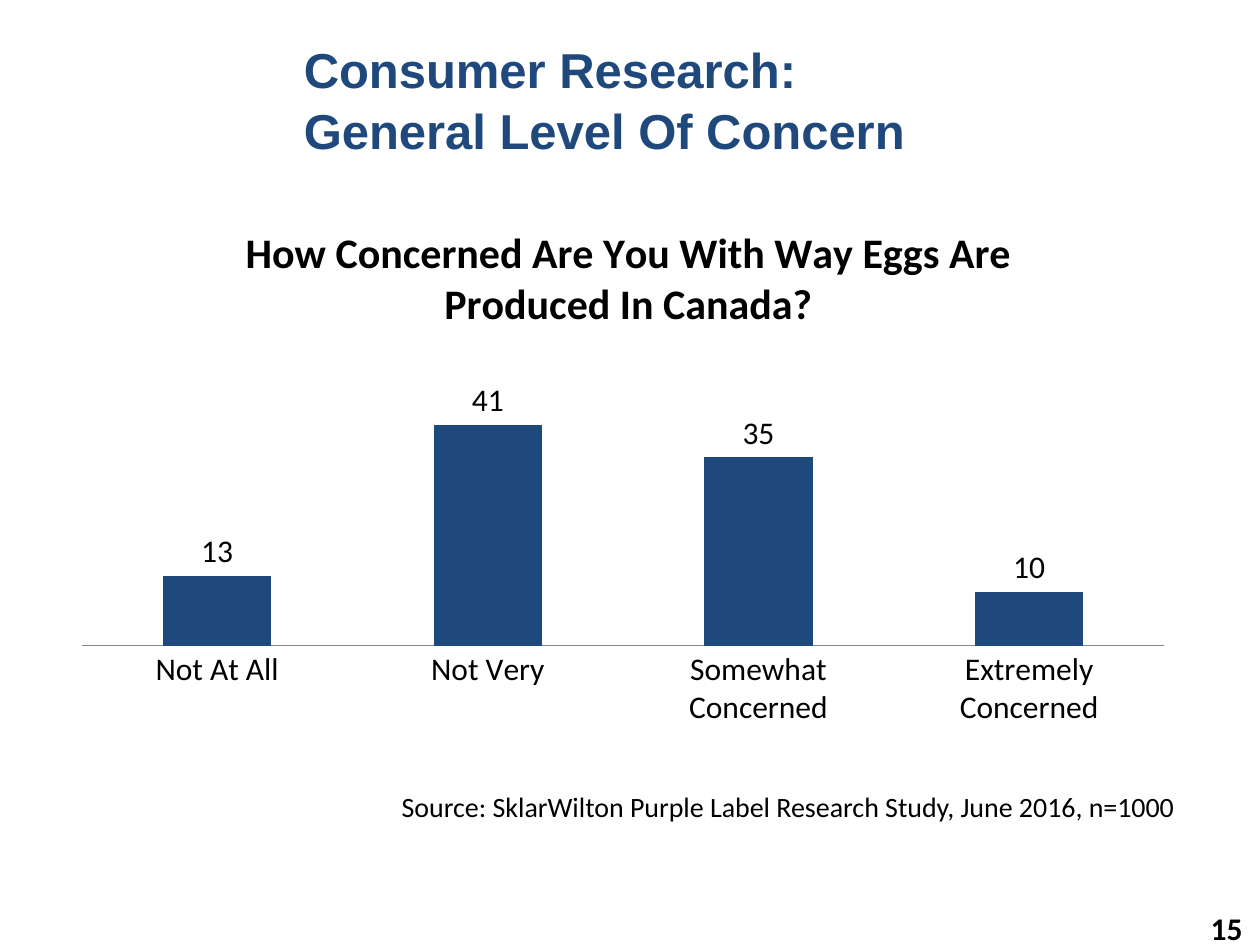
from lxml import etree
from pptx import Presentation
from pptx.chart.data import CategoryChartData
from pptx.dml.color import RGBColor
from pptx.enum.chart import XL_CHART_TYPE as ChartType, XL_LABEL_POSITION as LabelPos, XL_TICK_MARK as Tick
from pptx.enum.text import MSO_ANCHOR as Anchor, MSO_AUTO_SIZE as AutoSize, PP_ALIGN as Align
from pptx.oxml import parse_xml
from pptx.oxml.ns import qn
from pptx.util import Cm, Pt

COLORS = {"navy": "1F497D", "black": "000000", "axis": "868686"}
CHART_NS = "http://schemas.openxmlformats.org/drawingml/2006/chart"


def rgb(name):
    return RGBColor.from_string(COLORS[name])


def set_font(font, size, color="black", bold=False, name="Calibri"):
    font.name, font.size, font.bold = name, Pt(size), bold
    font.color.rgb = rgb(color)


def write(frame, text, align=Align.LEFT, anchor=Anchor.TOP, spacing=1.0, **style):
    """Fill a text frame, one paragraph for each line of text."""
    frame.word_wrap = True
    frame.auto_size = AutoSize.NONE
    frame.vertical_anchor = anchor
    for number, line in enumerate(text.split("\n")):
        para = frame.paragraphs[0] if number == 0 else frame.add_paragraph()
        para.alignment, para.line_spacing = align, spacing
        para.space_before = Pt(0)
        span = para.add_run()
        span.text = line
        set_font(span.font, **style)


def manual_layout(target=None, **places):
    """Make a chart layout from fractions of the chart area."""
    layout = parse_xml(f'<c:layout xmlns:c="{CHART_NS}"><c:manualLayout/></c:layout>')
    settings = {"layoutTarget": target} if target else {}
    settings.update({f"{key}Mode": "edge" for key in ("x", "y")}, **places)
    for tag, value in settings.items():
        etree.SubElement(layout[0], qn(f"c:{tag}")).set("val", str(value))
    return layout


class SlideBuilder:
    def __init__(self, deck):
        self.page = deck.slides.add_slide(deck.slide_layouts[5])

    def title(self, text, left, top, width, height):
        box = self.page.shapes.title
        box.left, box.top, box.width, box.height = map(Cm, (left, top, width, height))
        write(box.text_frame, text, spacing=1.05, size=28, color="navy", bold=True, name="Arial")

    def text(self, text, left, top, width, height, **style):
        box = self.page.shapes.add_textbox(*map(Cm, (left, top, width, height)))
        write(box.text_frame, text, **style)

    def column_chart(self, heading, values, left, top, width, height):
        data = CategoryChartData()
        data.categories = list(values)
        data.add_series("Series 1", list(values.values()))
        chart = self.page.shapes.add_chart(
            ChartType.COLUMN_CLUSTERED, *map(Cm, (left, top, width, height)), data).chart
        set_font(chart.font, 18)
        chart.has_legend = False

        # Heading
        chart.has_title = True
        write(chart.chart_title.text_frame, heading, align=Align.CENTER, size=24, bold=True)
        title = chart.chart_title._element
        for old in title.findall(qn("c:layout")):
            title.remove(old)
        title.find(qn("c:tx")).addnext(manual_layout(x=0.16, y=0.09))

        # Columns and their labels
        plot = chart.plots[0]
        plot.gap_width, plot.overlap = 150, -25
        plot.vary_by_categories = False
        fill = plot.series[0].format.fill
        fill.solid()
        fill.fore_color.rgb = rgb("navy")
        plot.has_data_labels = True
        labels = plot.data_labels
        labels.show_value, labels.position = True, LabelPos.OUTSIDE_END
        set_font(labels.font, 18)

        # Axes
        value_axis, category_axis = chart.value_axis, chart.category_axis
        value_axis.minimum_scale, value_axis.maximum_scale = 0, 45
        value_axis.has_major_gridlines = False
        value_axis.visible = False
        category_axis.major_tick_mark = Tick.NONE
        category_axis.format.line.color.rgb = rgb("axis")
        category_axis.format.line.width = Pt(0.75)

        # Plot area
        area = chart._chartSpace.chart.plotArea
        for old in area.findall(qn("c:layout")):
            area.remove(old)
        area.insert(0, manual_layout("inner", x=0.02, y=0.39, w=0.97, h=0.39))


def main():
    deck = Presentation()
    deck.slide_width, deck.slide_height = Cm(25.4), Cm(19.05)
    slide = SlideBuilder(deck)

    slide.title("Consumer Research:\nGeneral Level Of Concern", 5.87, 0.6, 18.5, 2.64)

    # Survey result
    answers = {"Not At All": 13, "Not Very": 41, "Somewhat Concerned": 35, "Extremely Concerned": 10}
    slide.column_chart("How Concerned Are You With Way Eggs Are Produced In Canada?",
                       answers, 1.2, 3.23, 22.5, 12.55)

    # Page number and source
    slide.text("15", 19.38, 18.2, 5.92, 1.02, align=Align.RIGHT, anchor=Anchor.MIDDLE, size=18, bold=True)
    slide.text("Source: SklarWilton Purple Label Research Study, June 2016, n=1000 ",
               2.26, 15.8, 21.8, 0.94, align=Align.RIGHT, size=16)

    deck.save("out.pptx")


if __name__ == "__main__":
    main()
